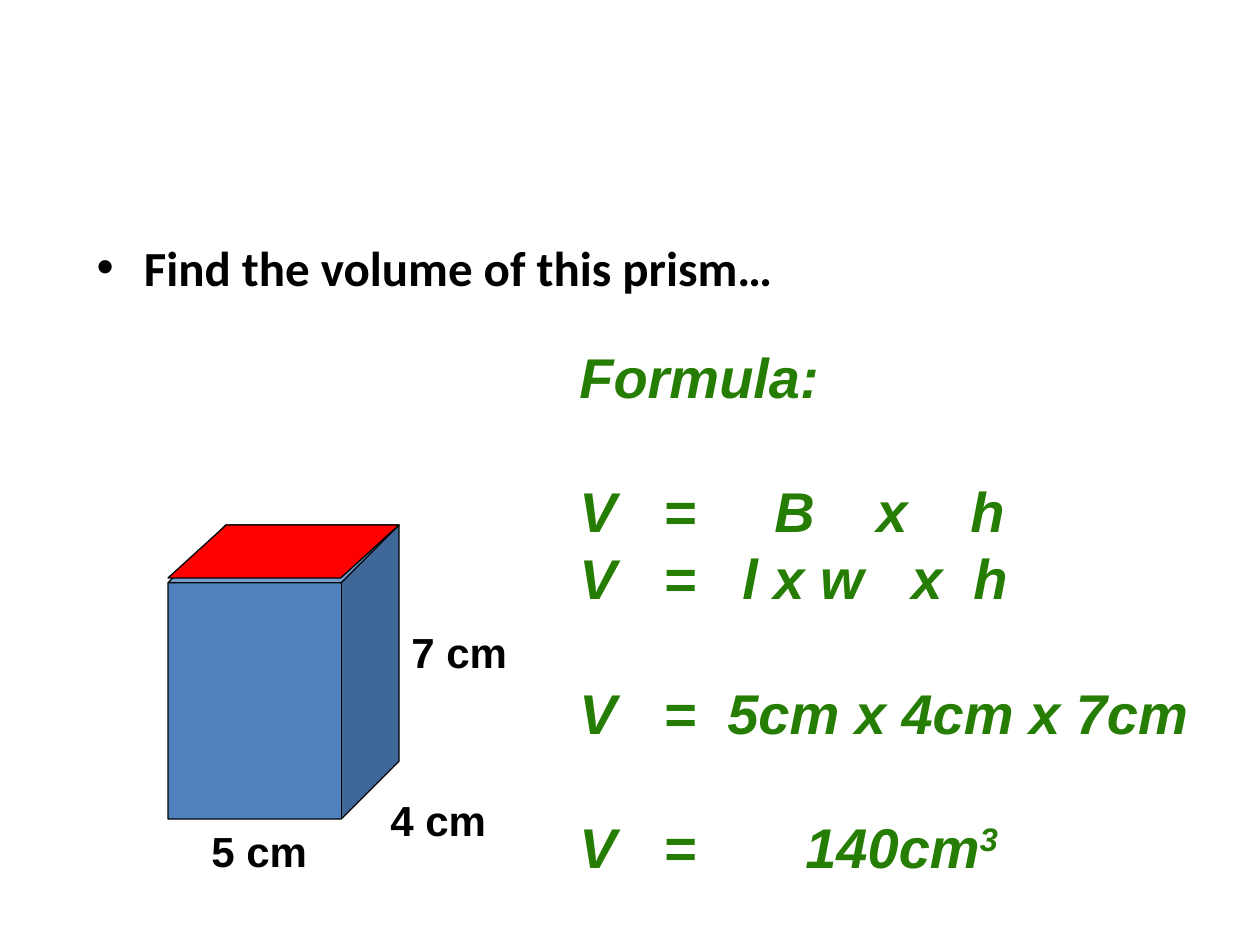
from pptx import Presentation
from pptx import util as u
from pptx.dml.color import RGBColor
from pptx.enum import shapes, text
from pptx.oxml.ns import qn
from lxml import etree

PX = 914400 // 126
COLORS = {"ink": "000000", "formula": "267D03", "prism": "4F81BD", "base": "FF0000"}


def px(*lengths):
    return [u.Emu(length * PX) for length in lengths]


def write(paragraph, words, size=24, font="Arial", color="ink", italic=False, raised=0):
    run = paragraph.add_run()
    run.text = words
    run.font.name, run.font.size = font, u.Pt(size)
    run.font.bold, run.font.italic = True, italic
    run.font.color.rgb = RGBColor.from_string(COLORS[color])
    if raised:
        run.font._element.set("baseline", str(raised * 1000))


prs = Presentation()
prs.slide_width, prs.slide_height = px(1260, 945)
slide = prs.slides.add_slide(prs.slide_layouts[1])
title = slide.shapes.title
title._element.getparent().remove(title._element)

# Task
task = slide.placeholders[1]
task.left, task.top, task.width, task.height = px(84, 231, 1113, 147)
write(task.text_frame.paragraphs[0], "Find the volume of this prism…", size=28, font="Calibri")

# Working: words, tab stops in px, blank lines above, exponent
steps = [
    ("Formula:", [], 0, ""),
    ("V\t=\tB\tx\th", [84, 195, 297, 391], 1, ""),
    ("V\t=\tl x w\tx\th", [84, 163, 332, 394], 0, ""),
    ("V\t=\t5cm x 4cm x 7cm", [84, 148], 1, ""),
    ("V\t=\t140cm", [84, 226], 1, "3"),
]
LINE = 38.4
working = slide.shapes.add_textbox(*px(567, 336, 672, 549)).text_frame
working.word_wrap = True
for i, (words, stops, gap, exponent) in enumerate(steps):
    step = working.add_paragraph() if i else working.paragraphs[0]
    step.line_spacing = u.Pt(LINE)
    step.space_before = u.Pt(gap * LINE)
    if stops:
        tabs = etree.SubElement(step._p.get_or_add_pPr(), qn("a:tabLst"))
        for stop in stops:
            etree.SubElement(tabs, qn("a:tab"), pos=str(stop * PX), algn="l")
    write(step, words, size=32, color="formula", italic=True)
    if exponent:
        write(step, exponent, size=32, color="formula", italic=True, raised=30)

# Prism with its base highlighted on top
for kind, height, slant, fill in [
    (shapes.MSO_SHAPE.CUBE, 294, 0.25, "prism"),
    (shapes.MSO_SHAPE.PARALLELOGRAM, 53, 1.1, "base"),
]:
    solid = slide.shapes.add_shape(kind, *px(168, 525, 231, height))
    solid.adjustments[0] = slant
    solid.shadow.inherit = False
    solid.fill.solid()
    solid.fill.fore_color.rgb = RGBColor.from_string(COLORS[fill])
    solid.line.color.rgb = RGBColor.from_string(COLORS["ink"])
    solid.line.width = u.Pt(0.75)

# Edge lengths
for words, left, top in [("5 cm", 199, 819), ("4 cm", 378, 788), ("7 cm", 399, 620)]:
    edge = slide.shapes.add_textbox(*px(left, top, 121, 63)).text_frame
    edge.word_wrap = False
    edge.auto_size = text.MSO_AUTO_SIZE.SHAPE_TO_FIT_TEXT
    write(edge.paragraphs[0], words)

prs.save("out.pptx")
